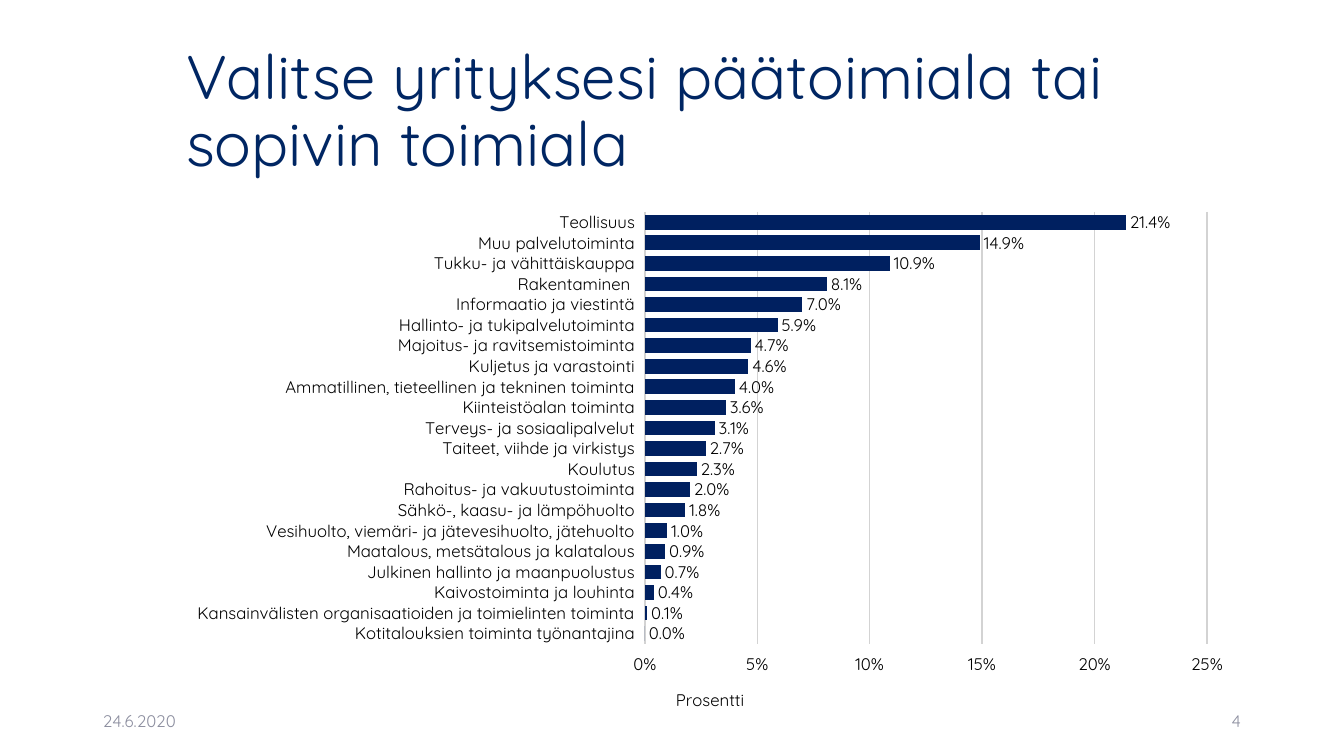
import pptx
import pptx.chart.data
import pptx.dml.color
import pptx.enum.chart
import pptx.enum.text
import pptx.oxml
import pptx.oxml.ns
import pptx.util

EMU_PER_PX = 914400 / 100.8
CHART_WIDTH, CHART_HEIGHT = 1067, 531
FONT = "Quicksand"
TITLE_BLUE, BAR_BLUE = "002663", "002060"
BLACK, WHITE, GRID_GREY, FOOTER_GREY = "000000", "FFFFFF", "D3D3D3", "8C8E9F"
LEFT = pptx.enum.text.PP_ALIGN.LEFT
RIGHT = pptx.enum.text.PP_ALIGN.RIGHT

# Industries and their shares in percent, largest first
SHARES = [
    ("Teollisuus", 21.4),
    ("Muu palvelutoiminta", 14.9),
    ("Tukku- ja vähittäiskauppa", 10.9),
    ("Rakentaminen ", 8.1),
    ("Informaatio ja viestintä", 7.0),
    ("Hallinto- ja tukipalvelutoiminta", 5.9),
    ("Majoitus- ja ravitsemistoiminta", 4.7),
    ("Kuljetus ja varastointi", 4.6),
    ("Ammatillinen, tieteellinen ja tekninen toiminta", 4.0),
    ("Kiinteistöalan toiminta", 3.6),
    ("Terveys- ja sosiaalipalvelut", 3.1),
    ("Taiteet, viihde ja virkistys", 2.7),
    ("Koulutus", 2.3),
    ("Rahoitus- ja vakuutustoiminta", 2.0),
    ("Sähkö-, kaasu- ja lämpöhuolto", 1.8),
    ("Vesihuolto, viemäri- ja jätevesihuolto, jätehuolto", 1.0),
    ("Maatalous, metsätalous ja kalatalous", 0.9),
    ("Julkinen hallinto ja maanpuolustus", 0.7),
    ("Kaivostoiminta ja louhinta", 0.4),
    ("Kansainvälisten organisaatioiden ja toimielinten toiminta", 0.1),
    ("Kotitalouksien toiminta työnantajina", 0.0),
]


def px(length):
    return pptx.util.Emu(round(length * EMU_PER_PX))


def rgb(color):
    return pptx.dml.color.RGBColor.from_string(color)


def format_font(font, size, color):
    font.name = FONT
    font.size = pptx.util.Pt(size)
    font.bold = False
    font.color.rgb = rgb(color)


def write_text(shape, text, size, color, align):
    frame = shape.text_frame
    frame.word_wrap = True
    frame.auto_size = pptx.enum.text.MSO_AUTO_SIZE.NONE
    frame.vertical_anchor = pptx.enum.text.MSO_ANCHOR.MIDDLE
    paragraph = frame.paragraphs[0]
    paragraph.alignment = align
    run = paragraph.add_run()
    run.text = text
    format_font(run.font, size, color)
    return paragraph


def add_title(slide, text):
    title = slide.shapes.title
    title.left, title.top, title.width, title.height = px(176), px(40), px(1067), px(146)
    write_text(title, text, 44, TITLE_BLUE, LEFT).line_spacing = 0.9


def add_footer(slide, left, text, align):
    box = slide.shapes.add_textbox(px(left), px(701), px(302), px(40))
    write_text(box, text, 12, FOOTER_GREY, align)


def set_layout(element, index, **lengths):
    """Place a chart part by px measured from the chart's top left corner."""
    for old in element.findall(pptx.oxml.ns.qn("c:layout")):
        element.remove(old)
    full = {"x": CHART_WIDTH, "y": CHART_HEIGHT, "w": CHART_WIDTH, "h": CHART_HEIGHT}
    target = '<c:layoutTarget val="inner"/>' if "w" in lengths else ""
    modes = "".join(f'<c:{key}Mode val="edge"/>' for key in "xy")
    values = "".join(f'<c:{key} val="{length / full[key]}"/>'
                     for key, length in lengths.items())
    element.insert(index, pptx.oxml.parse_xml(
        f'<c:layout {pptx.oxml.ns.nsdecls("c")}><c:manualLayout>'
        f"{target}{modes}{values}</c:manualLayout></c:layout>"))


def format_axis(axis):
    format_font(axis.tick_labels.font, 12, BLACK)
    axis.format.line.fill.background()
    axis.major_tick_mark = pptx.enum.chart.XL_TICK_MARK.OUTSIDE


def format_category_axis(axis):
    format_axis(axis)
    # Show every label, level and without skipping
    element = axis._element
    element.find(".//" + pptx.oxml.ns.qn("a:bodyPr")).set("rot", "0")
    skip = pptx.oxml.parse_xml(
        f'<c:tickLblSkip {pptx.oxml.ns.nsdecls("c")} val="1"/>')
    element.find(pptx.oxml.ns.qn("c:noMultiLvlLbl")).addprevious(skip)


def format_value_axis(axis):
    format_axis(axis)
    axis.minimum_scale, axis.maximum_scale, axis.major_unit = 0, 0.25, 0.05
    axis.tick_labels.number_format = "0%"
    axis.tick_labels.number_format_is_linked = False
    axis.has_major_gridlines = True
    grid = axis.major_gridlines.format.line
    grid.color.rgb = rgb(GRID_GREY)
    grid.width = pptx.util.Pt(1)
    run = axis.axis_title.text_frame.paragraphs[0].add_run()
    run.text = "Prosentti"
    format_font(run.font, 12, BLACK)
    set_layout(axis.axis_title._element, 1, x=497, y=483)


def format_bars(plot):
    plot.gap_width = 40
    plot.vary_by_categories = False
    bars = plot.series[0].format.fill
    bars.solid()
    bars.fore_color.rgb = rgb(BAR_BLUE)
    plot.has_data_labels = True
    labels = plot.data_labels
    labels.show_value = True
    labels.number_format = "0.0%"
    labels.number_format_is_linked = False
    labels.position = pptx.enum.chart.XL_LABEL_POSITION.OUTSIDE_END
    format_font(labels.font, 12, BLACK)


def add_share_chart(slide):
    # Bars run from the bottom up, so the smallest share comes first
    data = pptx.chart.data.CategoryChartData(number_format="0.0%")
    data.categories = [name for name, share in reversed(SHARES)]
    data.add_series("Series 1", [round(share / 100, 3) for name, share in reversed(SHARES)])
    chart = slide.shapes.add_chart(
        pptx.enum.chart.XL_CHART_TYPE.BAR_CLUSTERED,
        px(176), px(202), px(CHART_WIDTH), px(CHART_HEIGHT), data).chart
    chart.has_legend = False
    chart.has_title = False
    chart.font.name = "Calibri"
    chart.font.size = pptx.util.Pt(11)
    format_category_axis(chart.category_axis)
    format_value_axis(chart.value_axis)
    format_bars(chart.plots[0])

    # Plot area: fixed frame with a plain fill
    plot_area = chart._chartSpace.chart.plotArea
    set_layout(plot_area, 0, x=469, y=10, w=562, h=432)
    plot_area.append(pptx.oxml.parse_xml(
        f'<c:spPr {pptx.oxml.ns.nsdecls("c", "a")}><a:solidFill>'
        f'<a:srgbClr val="{WHITE}"/></a:solidFill></c:spPr>'))


def main():
    presentation = pptx.Presentation()
    presentation.slide_width, presentation.slide_height = px(1344), px(756)
    slide = presentation.slides.add_slide(presentation.slide_layouts[5])
    add_title(slide, "Valitse yrityksesi päätoimiala tai sopivin toimiala")
    add_footer(slide, 93, "24.6.2020", LEFT)
    add_footer(slide, 949, "4", RIGHT)
    add_share_chart(slide)
    presentation.save("out.pptx")


if __name__ == "__main__":
    main()
